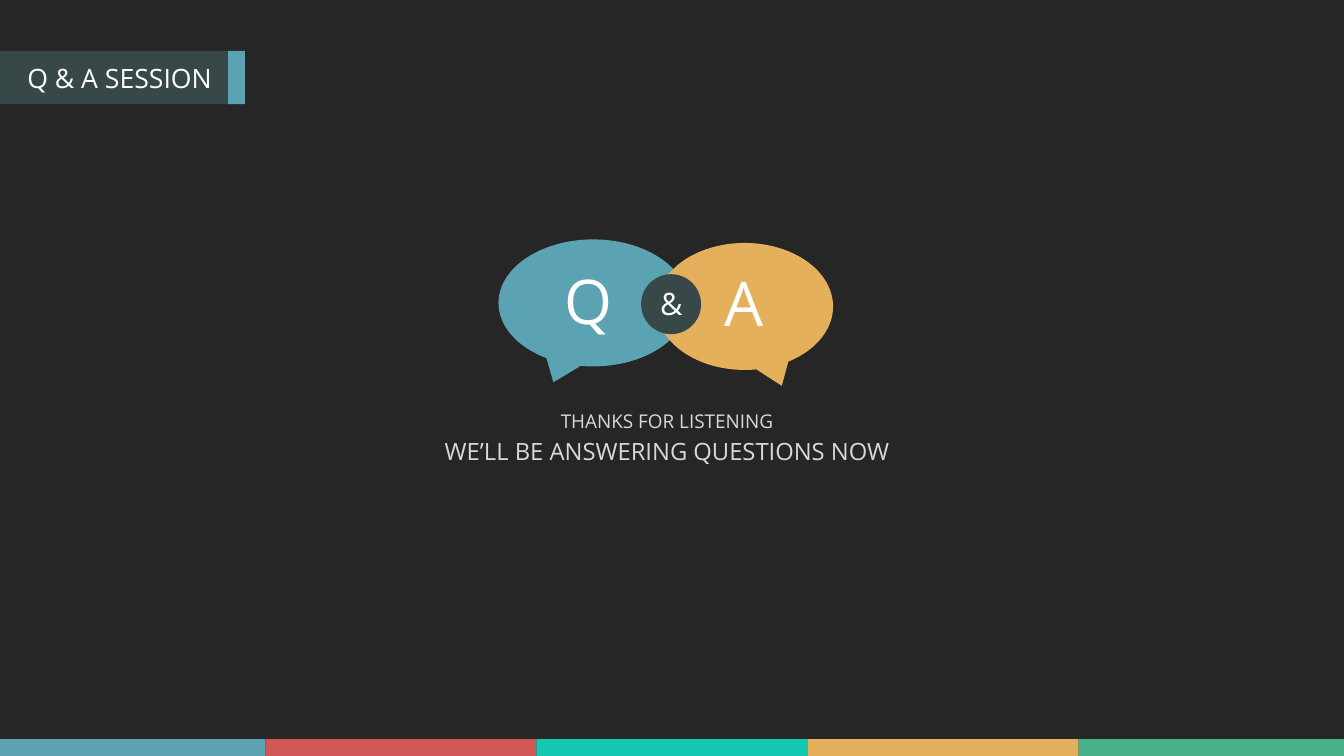
"""Build a dark Q & A closing slide on a grid of 80 columns by 45 rows."""
from pptx import Presentation
from pptx.dml.color import RGBColor
from pptx.enum.shapes import MSO_SHAPE
from pptx.enum.text import MSO_ANCHOR, PP_ALIGN
from pptx.util import Inches, Pt

COLUMNS, ROWS = 80, 45
CELL = Inches(1) / 3
FONT = "Open Sans"

BACKGROUND = RGBColor(0x26, 0x26, 0x26)
SLATE = RGBColor(0x38, 0x48, 0x49)
BLUE = RGBColor(0x5B, 0xA2, 0xB2)
RED = RGBColor(0xD1, 0x56, 0x56)
TEAL = RGBColor(0x13, 0xC7, 0xB2)
AMBER = RGBColor(0xE5, 0xB0, 0x5C)
GREEN = RGBColor(0x47, 0xB2, 0x89)
WHITE = RGBColor(0xFF, 0xFF, 0xFF)
LIGHT_GREY = RGBColor(0xD9, 0xD9, 0xD9)


def grid(*cells):
    """Turn grid cells into slide lengths."""
    return [round(cell * CELL) for cell in cells]


def add_block(s, kind, box, color):
    """Add a flat filled shape without an outline."""
    sp = s.shapes.add_shape(kind, *grid(*box))
    sp.shadow.inherit = False
    sp.fill.solid()
    sp.fill.fore_color.rgb = color
    sp.line.fill.background()
    return sp


def add_bubble(s, box, color, tail_x):
    """Add a speech bubble whose tail leans by a share of its width."""
    sp = add_block(s, MSO_SHAPE.OVAL_CALLOUT, box, color)
    sp.adjustments[0] = tail_x
    sp.adjustments[1] = 0.625


def add_text(s, box, text, size, color=WHITE, align=PP_ALIGN.LEFT):
    """Add one line of text, centred vertically in its box."""
    tf = s.shapes.add_textbox(*grid(*box)).text_frame
    tf.word_wrap = True
    tf.vertical_anchor = MSO_ANCHOR.MIDDLE
    p = tf.paragraphs[0]
    p.alignment = align
    r = p.add_run()
    r.text = text
    r.font.name = FONT
    r.font.size = Pt(size)
    r.font.color.rgb = color


def add_color_strip(s):
    """Add the bottom strip: two outer bands and three wider inner ones."""
    outer = 15.8
    inner = (COLUMNS - 2 * outer) / 3
    left = 0
    widths = (outer, inner, inner, inner, outer)
    for color, width in zip((BLUE, RED, TEAL, AMBER, GREEN), widths):
        add_block(s, MSO_SHAPE.RECTANGLE, (left, ROWS - 1, width, 1), color)
        left += width


def add_title(s):
    """Add the title tab at the left edge."""
    top, height = 3.03, 3.17
    add_block(s, MSO_SHAPE.RECTANGLE, (0, top, 13.75, height), SLATE)
    add_block(s, MSO_SHAPE.RECTANGLE, (13.58, top, 1, height), BLUE)
    add_text(s, (1.33, 3.5, 12.42, 2.22), "Q & A SESSION", 38)


def add_bubbles(s):
    """Add the overlapping Q and A bubbles joined by an ampersand."""
    add_bubble(s, (29.67, 14.25, 11.28, 7.56), BLUE, -0.21)
    add_bubble(s, (39.06, 14.46, 10.53, 7.56), AMBER, 0.21)
    add_text(s, (33.3, 15.45, 2.58, 4.74), "Q", 88)
    add_text(s, (42.81, 15.57, 2.58, 4.74), "A", 88)
    add_block(s, MSO_SHAPE.OVAL, (38.16, 16.32, 3.57, 3.57), SLATE)
    add_text(s, (39, 16.77, 2.76, 2.52), "&", 44)


def add_closing(s):
    """Add the two centred closing lines."""
    left, width = 23.88, 31.65
    add_text(s, (left, 24.2, width, 1.68), "THANKS FOR LISTENING",
             27, LIGHT_GREY, PP_ALIGN.CENTER)
    add_text(s, (left, 25.86, width, 2), "WE’LL BE ANSWERING QUESTIONS NOW",
             34, LIGHT_GREY, PP_ALIGN.CENTER)


def main():
    """Build and save the slide."""
    prs = Presentation()
    prs.slide_width, prs.slide_height = grid(COLUMNS, ROWS)
    s = prs.slides.add_slide(prs.slide_layouts[6])
    s.background.fill.solid()
    s.background.fill.fore_color.rgb = BACKGROUND
    add_color_strip(s)
    add_bubbles(s)
    add_closing(s)
    add_title(s)
    prs.save("out.pptx")


if __name__ == "__main__":
    main()
